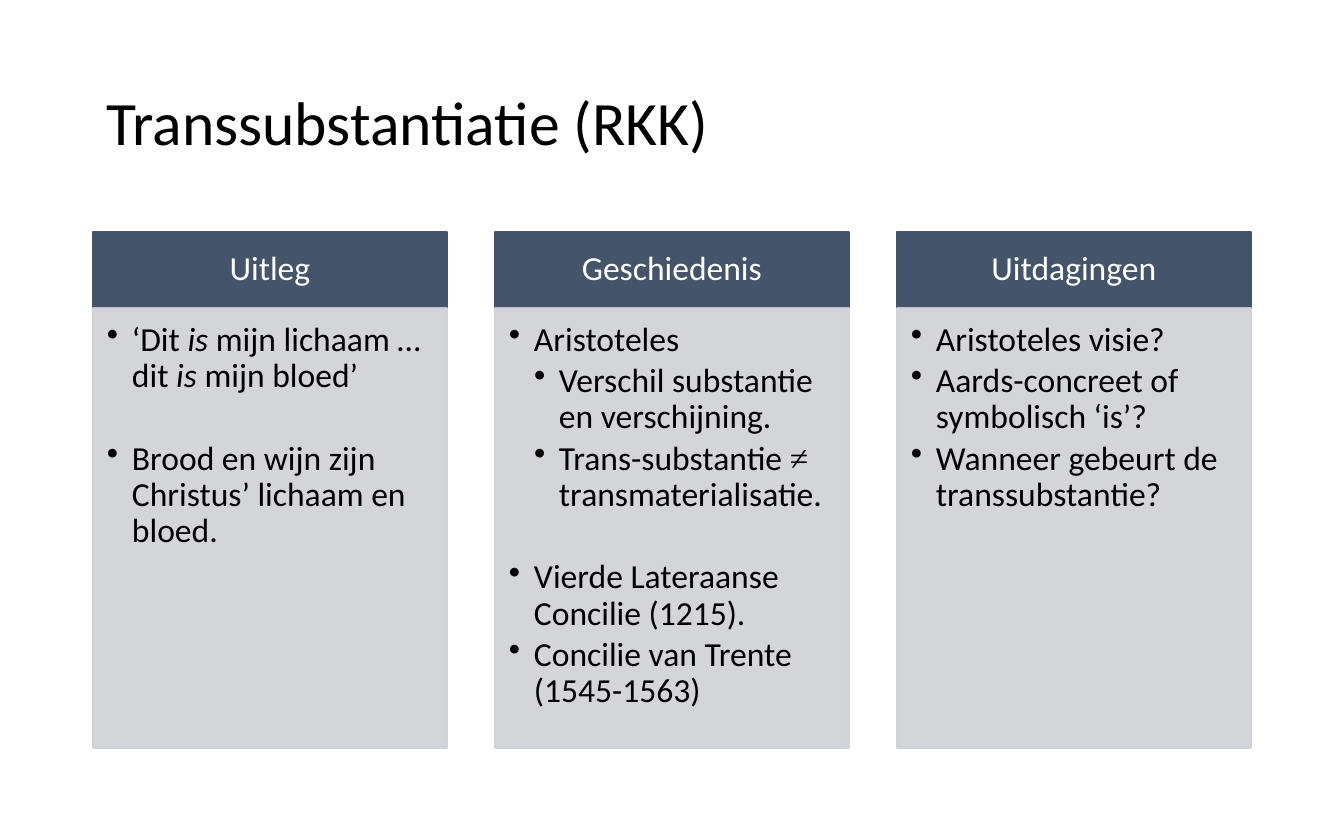
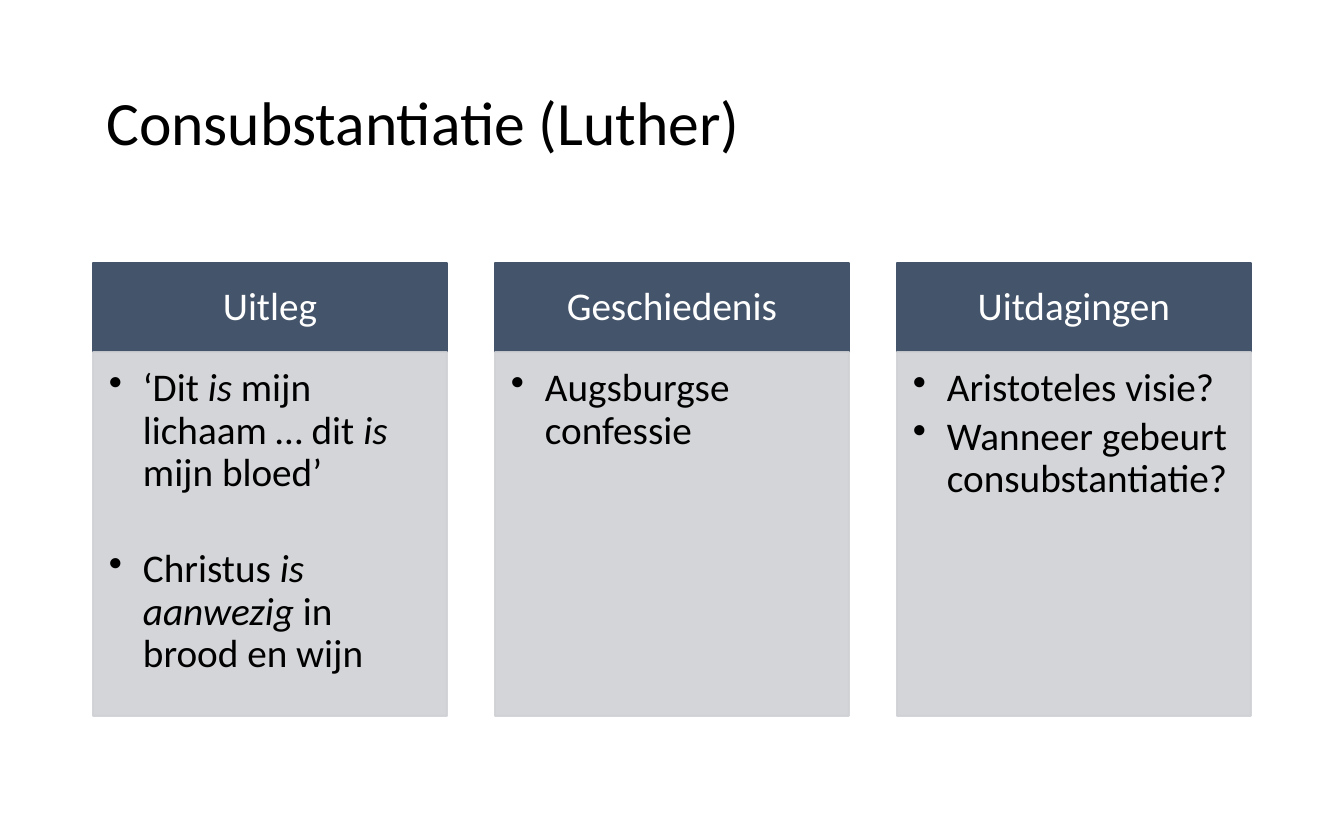
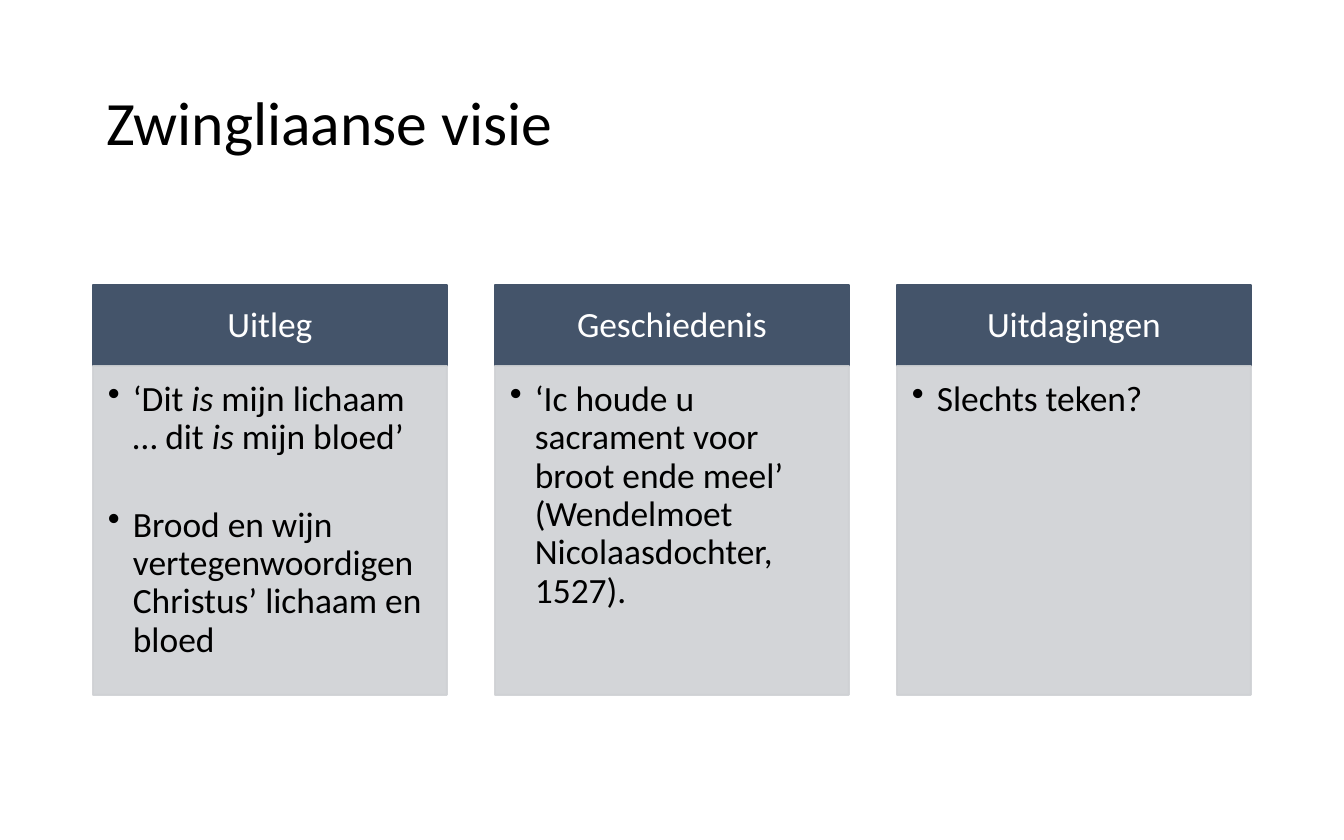
import pptx
import pptx.dml.color
import pptx.enum.shapes
import pptx.enum.text
import pptx.oxml.ns
import pptx.util
from lxml import etree

# Scale, colours and fonts
SLIDE_WIDTH, SLIDE_HEIGHT = 1344, 840
PX = 9144000 / SLIDE_WIDTH
NAVY = pptx.dml.color.RGBColor(0x44, 0x54, 0x6A)
GREY = pptx.dml.color.RGBColor(0xCF, 0xD1, 0xD4)
BLACK = pptx.dml.color.RGBColor(0x00, 0x00, 0x00)
WHITE = pptx.dml.color.RGBColor(0xFF, 0xFF, 0xFF)
ITALIC = {"italic": True}
SERIF = {"name": "Times New Roman"}
MIDDLE = pptx.enum.text.MSO_ANCHOR.MIDDLE
TOP = pptx.enum.text.MSO_ANCHOR.TOP
LEFT = pptx.enum.text.PP_ALIGN.LEFT
CENTER = pptx.enum.text.PP_ALIGN.CENTER

# Column grid
HEADINGS = ["Uitleg", "Geschiedenis", "Uitdagingen"]
COLUMN_LEFT, COLUMN_PITCH, COLUMN_WIDTH = 93, 402, 354

# Each point is (level, gap above, runs); a run is (text, format changes)
WORDS_OF_INSTITUTION = (1, False, [
    ("‘Dit ", {}), ("is", ITALIC), (" mijn lichaam … dit ", {}),
    ("is", ITALIC), (" mijn bloed’", {})])

SLIDES = [
    {"title": "Transsubstantiatie (RKK)", "size": 18, "indent": 25,
     "top": 232, "header_height": 76, "body_height": 440,
     "columns": [
         [WORDS_OF_INSTITUTION,
          (1, True, [("Brood en wijn zijn Christus’ lichaam en bloed.", {})])],
         [(1, False, [("Aristoteles", {})]),
          (2, False, [("Verschil substantie en verschijning.", {})]),
          (2, False, [("Trans-substantie ", {}), ("≠ ", SERIF),
                      ("transmaterialisatie.", {})]),
          (1, True, [("Vierde Lateraanse Concilie (1215).", {})]),
          (1, False, [("Concilie van Trente (1545-1563)", {})])],
         [(1, False, [("Aristoteles visie?", {})]),
          (1, False, [("Aards-concreet of symbolisch ‘is’?", {})]),
          (1, False, [("Wanneer gebeurt de transsubstantie?", {})])]]},
    {"title": "Consubstantiatie (Luther)", "size": 21, "indent": 34,
     "top": 263, "header_height": 89, "body_height": 364,
     "columns": [
         [WORDS_OF_INSTITUTION,
          (1, True, [("Christus ", {}), ("is aanwezig ", ITALIC),
                     ("in brood en wijn", {})])],
         [(1, False, [("Augsburgse confessie", {})])],
         [(1, False, [("Aristoteles visie?", {})]),
          (1, False, [("Wanneer gebeurt consubstantiatie?", {})])]]},
    {"title": "Zwingliaanse visie", "size": 19, "indent": 25,
     "top": 285, "header_height": 81, "body_height": 329,
     "columns": [
         [WORDS_OF_INSTITUTION,
          (1, True, [("Brood en wijn vertegenwoordigen Christus’ lichaam en bloed", {})])],
         [(1, False, [("‘Ic houde u sacrament voor broot ende meel’ "
                       "(Wendelmoet Nicolaasdochter, 1527).", {})])],
         [(1, False, [("Slechts teken?", {})])]]},
]


def px(*lengths):
    return [round(length * PX) for length in lengths]


def write_paragraph(paragraph, runs, size, color, alignment=LEFT):
    paragraph.line_spacing = 0.9
    paragraph.alignment = alignment
    for text, changes in runs:
        run = paragraph.add_run()
        run.text = text
        run.font.color.rgb = color
        font_format = {"name": "Calibri", "size": pptx.util.Pt(size), **changes}
        for attribute, value in font_format.items():
            setattr(run.font, attribute, value)


presentation = pptx.Presentation()
presentation.slide_width, presentation.slide_height = px(SLIDE_WIDTH, SLIDE_HEIGHT)

for content in SLIDES:
    slide = presentation.slides.add_slide(presentation.slide_layouts[6])
    size = content["size"]

    # Title
    title = slide.shapes.add_textbox(*px(93, 44, 1158, 163))
    title.text_frame.word_wrap = True
    title.text_frame.vertical_anchor = MIDDLE
    write_paragraph(title.text_frame.paragraphs[0], [(content["title"], {})], 33, BLACK)

    # Insets grow with the text size
    side, header_edge = round(size * 1.05), round(size * 0.6)
    body_edge, body_bottom = round(size * 0.78), round(size * 1.18)
    body_top = content["top"] + content["header_height"]

    for column, (heading, points) in enumerate(zip(HEADINGS, content["columns"])):
        left = COLUMN_LEFT + column * COLUMN_PITCH

        # Header and body boxes
        frames = []
        for top, height, color, anchor, insets in [
            (content["top"], content["header_height"], NAVY, MIDDLE,
             (side, header_edge, side, header_edge)),
            (body_top, content["body_height"], GREY, TOP,
             (body_edge, body_edge, side, body_bottom)),
        ]:
            shape = slide.shapes.add_shape(
                pptx.enum.shapes.MSO_SHAPE.RECTANGLE, *px(left, top, COLUMN_WIDTH, height))
            shape.shadow.inherit = False
            shape.fill.solid()
            shape.fill.fore_color.rgb = color
            shape.line.color.rgb = color
            shape.line.width = pptx.util.Pt(1)
            frame = shape.text_frame
            frame_format = {"word_wrap": True, "vertical_anchor": anchor}
            margins = ["margin_left", "margin_top", "margin_right", "margin_bottom"]
            frame_format.update(zip(margins, px(*insets)))
            for attribute, value in frame_format.items():
                setattr(frame, attribute, value)
            frames.append(frame)

        # The body box is slightly transparent
        for color_element in list(shape.element.spPr.iter(pptx.oxml.ns.qn("a:srgbClr"))):
            etree.SubElement(color_element, pptx.oxml.ns.qn("a:alpha"), val="90000")

        header_frame, body_frame = frames
        write_paragraph(header_frame.paragraphs[0], [(heading, {})], size, WHITE, CENTER)

        # Bulleted points
        for index, (level, gap_above, runs) in enumerate(points):
            paragraph = body_frame.add_paragraph() if index else body_frame.paragraphs[0]
            write_paragraph(paragraph, runs, size, BLACK)
            paragraph.level = level
            paragraph.space_after = pptx.util.Pt(size * 0.15)
            paragraph.space_before = pptx.util.Pt(size * 1.23 if gap_above else 0)
            properties = paragraph._p.get_or_add_pPr()
            margin, hanging = px(content["indent"] * level, -content["indent"])
            properties.set("marL", str(margin))
            properties.set("indent", str(hanging))
            etree.SubElement(properties, pptx.oxml.ns.qn("a:buChar"), char="•")

presentation.save("out.pptx")
